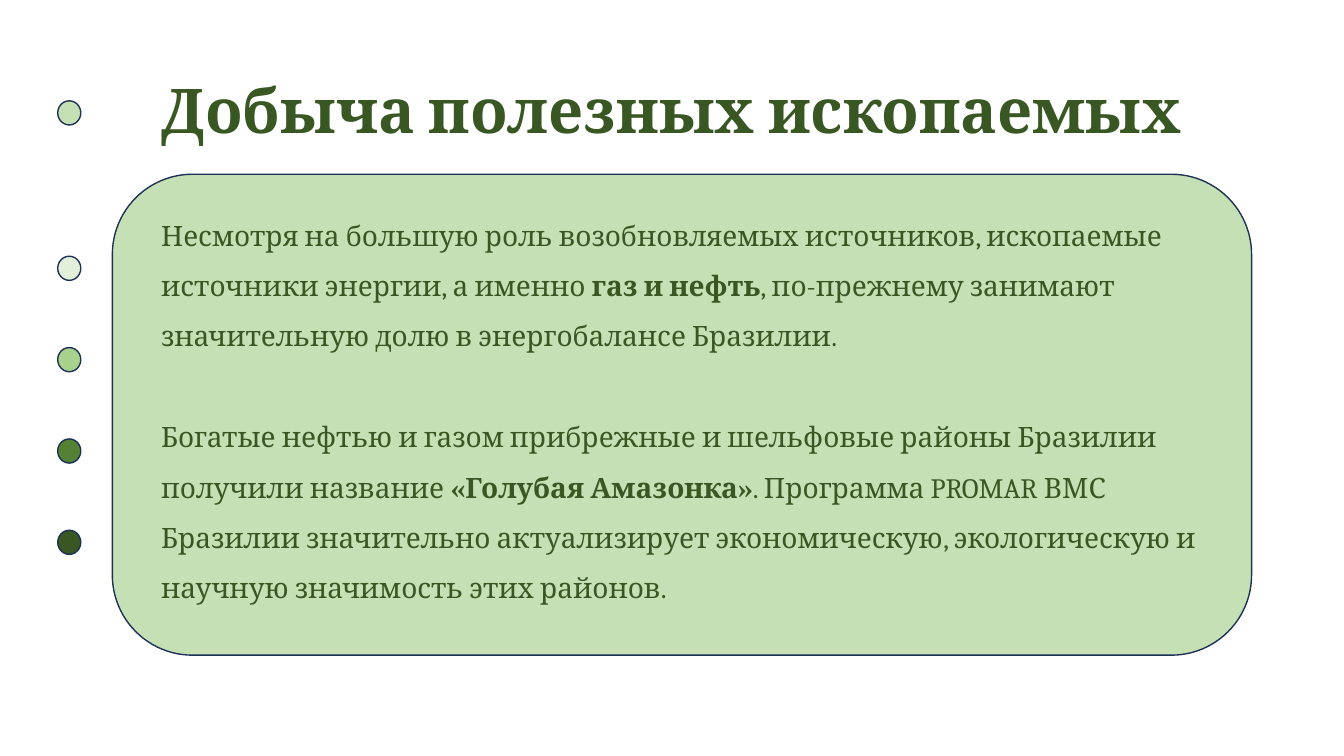
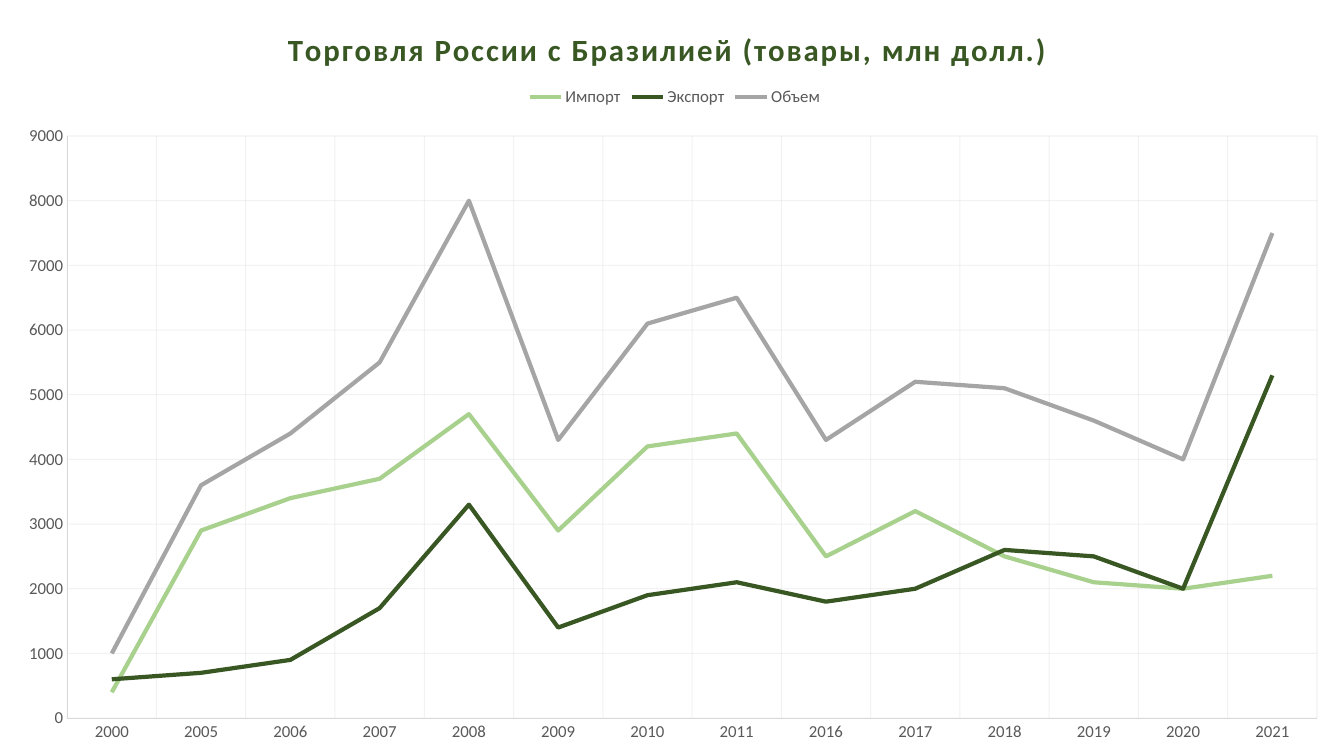
"""Build two slides on Brazilian energy resources and trade."""
from dataclasses import dataclass

from lxml.etree import SubElement
from pptx import Presentation
from pptx.chart.data import CategoryChartData
from pptx.dml.color import RGBColor
from pptx.enum.chart import XL_CHART_TYPE as ChartType
from pptx.enum.chart import XL_LEGEND_POSITION as LegendPosition
from pptx.enum.chart import XL_TICK_MARK as TickMark
from pptx.enum.shapes import MSO_SHAPE as Preset
from pptx.enum.text import MSO_ANCHOR as Anchor
from pptx.enum.text import PP_ALIGN as Align
from pptx.oxml import parse_xml
from pptx.oxml.ns import nsdecls, qn
from pptx.util import Emu, Pt

EMU_PER_PX = 9525
WIDTH, HEIGHT = 1280, 720
COLORS = {
    "pale": "E2F0D9",
    "light": "C5E0B4",
    "fresh": "A9D18E",
    "leaf": "548235",
    "dark": "385723",
    "navy": "1E3256",
    "gray": "A5A5A5",
    "label": "595959",
    "grid": "D9D9D9",
}
SERIF, SANS = "Cambria", "Calibri"


@dataclass(frozen=True)
class Box:
    left: int
    top: int
    width: int
    height: int

    def emu(self) -> tuple[Emu, ...]:
        return tuple(Emu(value * EMU_PER_PX) for value in (self.left, self.top, self.width, self.height))


@dataclass(frozen=True)
class Span:
    text: str
    bold: bool = False


@dataclass(frozen=True)
class Series:
    name: str
    color: str
    values: tuple[int, ...]


@dataclass(frozen=True)
class Place:
    tag: str
    index: int
    fractions: dict[str, float]


DOT_LEFT, DOT_WIDTH, DOT_HEIGHT = 55, 22, 23
DOT_TOP, DOT_STEP = 244, 87
TITLE_DOT_TOP = 96
TITLE_BOX = Box(88, 39, 1104, 139)
PANEL_BOX = Box(107, 166, 1085, 458)
BODY_BOX = Box(144, 187, 1010, 448)

BODY = (
    (
        Span("Несмотря на большую роль возобновляемых источников, ископаемые источники энергии, а именно "),
        Span("газ и нефть", bold=True),
        Span(", по-прежнему занимают значительную долю в энергобалансе Бразилии."),
    ),
    (
        Span("Богатые нефтью и газом прибрежные и шельфовые районы Бразилии получили название "),
        Span("«Голубая Амазонка»", bold=True),
        Span(
            ". Программа PROMAR ВМС Бразилии значительно актуализирует экономическую, "
            "экологическую и научную значимость этих районов."
        ),
    ),
)

YEARS = ("2000", "2005", "2006", "2007", "2008", "2009", "2010",
         "2011", "2016", "2017", "2018", "2019", "2020", "2021")
TRADE = (
    Series("Импорт", "fresh", (400, 2900, 3400, 3700, 4700, 2900, 4200,
                               4400, 2500, 3200, 2500, 2100, 2000, 2200)),
    Series("Экспорт", "dark", (600, 700, 900, 1700, 3300, 1400, 1900,
                               2100, 1800, 2000, 2600, 2500, 2000, 5300)),
    Series("Объем", "gray", (1000, 3600, 4400, 5500, 8000, 4300, 6100,
                             6500, 4300, 5200, 5100, 4600, 4000, 7500)),
)
CHART_PLACES = (
    Place("title", 1, {"x": 0.21, "y": 0.03}),
    Place("legend", 1, {"x": 0.39, "y": 0.11}),
    Place("plotArea", 0, {"x": 0.05, "y": 0.18, "w": 0.93, "h": 0.77}),
)


def rgb(name: str) -> RGBColor:
    return RGBColor.from_string(COLORS[name])


def style_font(font, face: str, size: float, color: str, bold: bool = False) -> None:
    font.name, font.size, font.bold = face, Pt(size), bold
    font.color.rgb = rgb(color)


def style_line(line, color: str, width: float) -> None:
    line.color.rgb = rgb(color)
    line.width = Pt(width)


def add_panel(page, preset: Preset, box: Box, fill: str) -> None:
    shape = page.shapes.add_shape(preset, *box.emu())
    shape.shadow.inherit = False
    shape.fill.solid()
    shape.fill.fore_color.rgb = rgb(fill)
    style_line(shape.line, "navy", 1)


def add_dot(page, top: int, fill: str) -> None:
    add_panel(page, Preset.OVAL, Box(DOT_LEFT, top, DOT_WIDTH, DOT_HEIGHT), fill)


def add_text_frame(page, box: Box):
    frame = page.shapes.add_textbox(*box.emu()).text_frame
    frame.word_wrap = True
    return frame


def add_title(page, text: str) -> None:
    frame = add_text_frame(page, TITLE_BOX)
    frame.vertical_anchor = Anchor.MIDDLE
    para = frame.paragraphs[0]
    para.text = text
    para.alignment = Align.CENTER
    para.line_spacing = 0.9
    style_font(para.font, SERIF, 44, "dark", bold=True)


def add_body(page) -> None:
    frame = add_text_frame(page, BODY_BOX)
    for index, spans in enumerate(BODY):
        para = frame.add_paragraph() if index else frame.paragraphs[0]
        para.line_spacing = 1.5
        para.space_before = Pt(36 if index else 0)
        style_font(para.font, SERIF, 20, "dark")
        for span in spans:
            run = para.add_run()
            run.text = span.text
            run.font.bold = span.bold


def place_chart_part(chart, place: Place) -> None:
    part = chart.element.xpath(f"c:chart//c:{place.tag}")[0]
    for old in part.findall(qn("c:layout")):
        part.remove(old)
    layout = parse_xml(f"<c:layout {nsdecls('c')}><c:manualLayout/></c:layout>")
    manual = layout[0]
    if place.tag == "plotArea":
        SubElement(manual, qn("c:layoutTarget")).set("val", "inner")
    for axis in ("x", "y"):
        SubElement(manual, qn(f"c:{axis}Mode")).set("val", "edge")
    for name, fraction in place.fractions.items():
        SubElement(manual, qn(f"c:{name}")).set("val", str(fraction))
    part.insert(place.index, layout)


def style_axis(axis) -> None:
    axis.major_tick_mark = axis.minor_tick_mark = TickMark.NONE
    axis.has_major_gridlines = True
    style_line(axis.major_gridlines.format.line, "grid", 0.75)
    style_line(axis.format.line, "grid", 0.75)
    style_font(axis.tick_labels.font, SANS, 12, "label")


def add_chart_title(chart, text: str) -> None:
    chart.has_title = True
    run = chart.chart_title.text_frame.paragraphs[0].add_run()
    run.text = text
    style_font(run.font, SANS, 22, "dark", bold=True)
    for props in chart.element.xpath("c:chart/c:title//a:rPr"):
        props.set("spc", "150")


def add_trade_chart(page) -> None:
    data = CategoryChartData(number_format="General")
    data.categories = YEARS
    for series in TRADE:
        data.add_series(series.name, series.values)
    chart = page.shapes.add_chart(ChartType.LINE, *Box(0, 0, WIDTH, HEIGHT).emu(), data).chart
    style_font(chart.font, SANS, 12, "label")
    add_chart_title(chart, "Торговля России с Бразилией (товары, млн долл.)")

    chart.has_legend = True
    chart.legend.position = LegendPosition.TOP
    chart.legend.include_in_layout = False
    style_font(chart.legend.font, SANS, 12, "label")

    plot = chart.plots[0]
    plot.vary_by_categories = False
    for series, line in zip(TRADE, plot.series):
        line.smooth = False
        style_line(line.format.line, series.color, 3)

    for axis in (chart.category_axis, chart.value_axis):
        style_axis(axis)
    chart.value_axis.minimum_scale, chart.value_axis.maximum_scale = 0, 9000
    chart.value_axis.major_unit = 1000
    for color in chart.element.xpath("//c:majorGridlines//a:srgbClr"):
        SubElement(color, qn("a:alpha")).set("val", "32000")
    for place in CHART_PLACES:
        place_chart_part(chart, place)


def build_resources(page) -> None:
    add_title(page, "Добыча полезных ископаемых")
    add_dot(page, TITLE_DOT_TOP, "light")
    for index, fill in enumerate(("pale", "fresh", "leaf", "dark")):
        add_dot(page, DOT_TOP + index * DOT_STEP, fill)
    add_panel(page, Preset.ROUNDED_RECTANGLE, PANEL_BOX, "light")
    add_body(page)


def main() -> None:
    deck = Presentation()
    deck.slide_width, deck.slide_height = Emu(WIDTH * EMU_PER_PX), Emu(HEIGHT * EMU_PER_PX)
    for build in (build_resources, add_trade_chart):
        build(deck.slides.add_slide(deck.slide_layouts[6]))
    deck.save("out.pptx")


if __name__ == "__main__":
    main()
